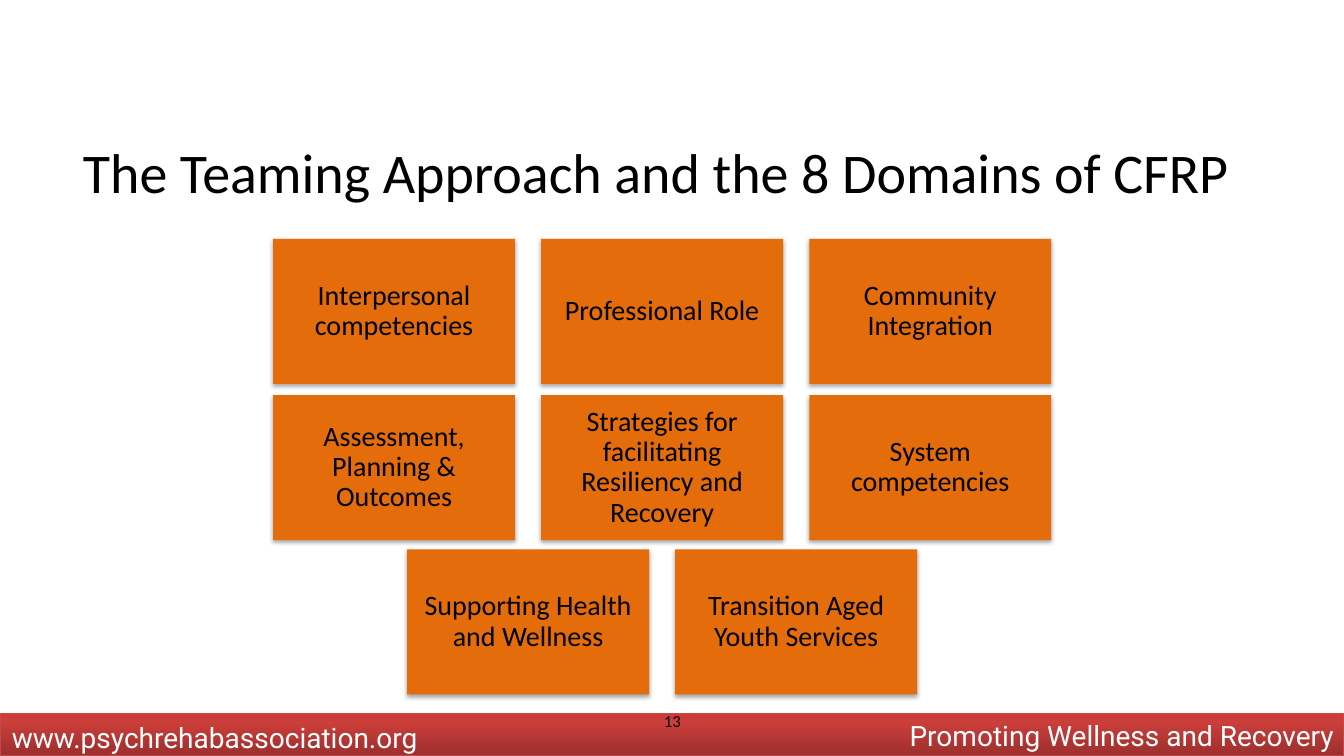
from copy import deepcopy

from lxml import etree
from pptx import Presentation
from pptx.dml.color import RGBColor
from pptx.enum.shapes import MSO_SHAPE
from pptx.enum.text import MSO_ANCHOR, PP_ALIGN
from pptx.oxml.ns import qn
from pptx.util import Pt

RECT = MSO_SHAPE.RECTANGLE
TOP, MIDDLE, BOTTOM = MSO_ANCHOR.TOP, MSO_ANCHOR.MIDDLE, MSO_ANCHOR.BOTTOM
LEFT, CENTER, RIGHT = PP_ALIGN.LEFT, PP_ALIGN.CENTER, PP_ALIGN.RIGHT

WIDE, HIGH = 960, 540
BLACK, WHITE, ORANGE = "000000", "FFFFFF", "E46C0A"
BAR_STOPS = [(0, "9C2F2D"), (0.8, "CB3E3A"), (1, "CE3B37")]

# Domain grid: each row is centred on MID
MID = 473
BOX_W, BOX_H, GAP = 172.8, 103.7, 18.7
ROWS = [
    (170.6, ["Interpersonal competencies", "Professional Role",
             "Community Integration"]),
    (282.2, ["Assessment, Planning & Outcomes",
             "Strategies for facilitating Resiliency and Recovery",
             "System competencies"]),
    (392.4, ["Supporting Health and Wellness",
             "Transition Aged Youth Services"]),
]


def color(code):
    return RGBColor.from_string(code)


def write(shape, text, size, font="Calibri", ink=BLACK, align=CENTER,
          anchor=TOP, inset=(7.2, 3.6, 7.2, 3.6), lead=None, wrap=True):
    frame = shape.text_frame
    frame.text = text
    frame.word_wrap = wrap
    frame.vertical_anchor = anchor
    (frame.margin_left, frame.margin_top,
     frame.margin_right, frame.margin_bottom) = [Pt(n) for n in inset]
    para = frame.paragraphs[0]
    para.alignment = align
    para.line_spacing = lead
    for run in para.runs:
        run.font.size = Pt(size)
        run.font.name = font
        run.font.color.rgb = color(ink)


def label(slide, place, text, size, **style):
    box = slide.shapes.add_textbox(*[Pt(n) for n in place])
    write(box, text, size, **style)


def block(slide, place):
    """Add a rectangle with a soft shadow below it."""
    shape = slide.shapes.add_shape(RECT, *[Pt(n) for n in place])
    shape.shadow.inherit = False
    shape.line.fill.background()
    effects = shape._element.spPr.find(qn("a:effectLst"))
    shade = etree.SubElement(
        effects, qn("a:outerShdw"), blurRad=str(Pt(3.1)), dist=str(Pt(1.8)),
        dir="5400000", rotWithShape="0")
    tint = etree.SubElement(shade, qn("a:srgbClr"), val=BLACK)
    etree.SubElement(tint, qn("a:alpha"), val="35000")
    return shape


def footer(slide):
    bar = block(slide, (0, 510, WIDE, 30))
    bar.line.color.rgb = color("BF4C48")
    bar.line.width = Pt(0.75)
    # Three-stop gradient running upwards
    bar.fill.gradient()
    bar.fill.gradient_angle = 90
    stops = bar._element.spPr.find(".//" + qn("a:gsLst"))
    stops.append(deepcopy(stops[-1]))
    for stop, (spot, code) in zip(bar.fill.gradient_stops, BAR_STOPS):
        stop.position = spot
        stop.color.rgb = color(code)
    write(bar, "Promoting Wellness and Recovery", 20, font="Roboto",
          ink=WHITE, align=RIGHT, anchor=BOTTOM, inset=(7.2, 0, 7.2, 2.5))
    label(slide, (1.4, 511.2, 369.4, 31.5), "www.psychrehabassociation.org",
          20, font="Roboto", ink=WHITE, align=LEFT, wrap=False)


def grid(slide):
    for top, names in ROWS:
        span = len(names) * (BOX_W + GAP) - GAP
        for i, name in enumerate(names):
            left = MID - span / 2 + i * (BOX_W + GAP)
            box = block(slide, (left, top, BOX_W, BOX_H))
            box.fill.solid()
            box.fill.fore_color.rgb = color(ORANGE)
            write(box, name, 20, anchor=MIDDLE, inset=[5.8] * 4, lead=0.9)


def main():
    deck = Presentation()
    deck.slide_width, deck.slide_height = Pt(WIDE), Pt(HIGH)
    slide = deck.slides.add_slide(deck.slide_layouts[6])
    footer(slide)
    # Title
    label(slide, (6.5, 100, 933, 55.4),
          "The Teaming Approach and the 8 Domains of CFRP ", 40, lead=0.9)
    grid(slide)
    # Page number
    label(slide, (328.3, 500.4, 303.8, 28.8), "13", 12, anchor=MIDDLE)
    deck.save("out.pptx")


if __name__ == "__main__":
    main()
